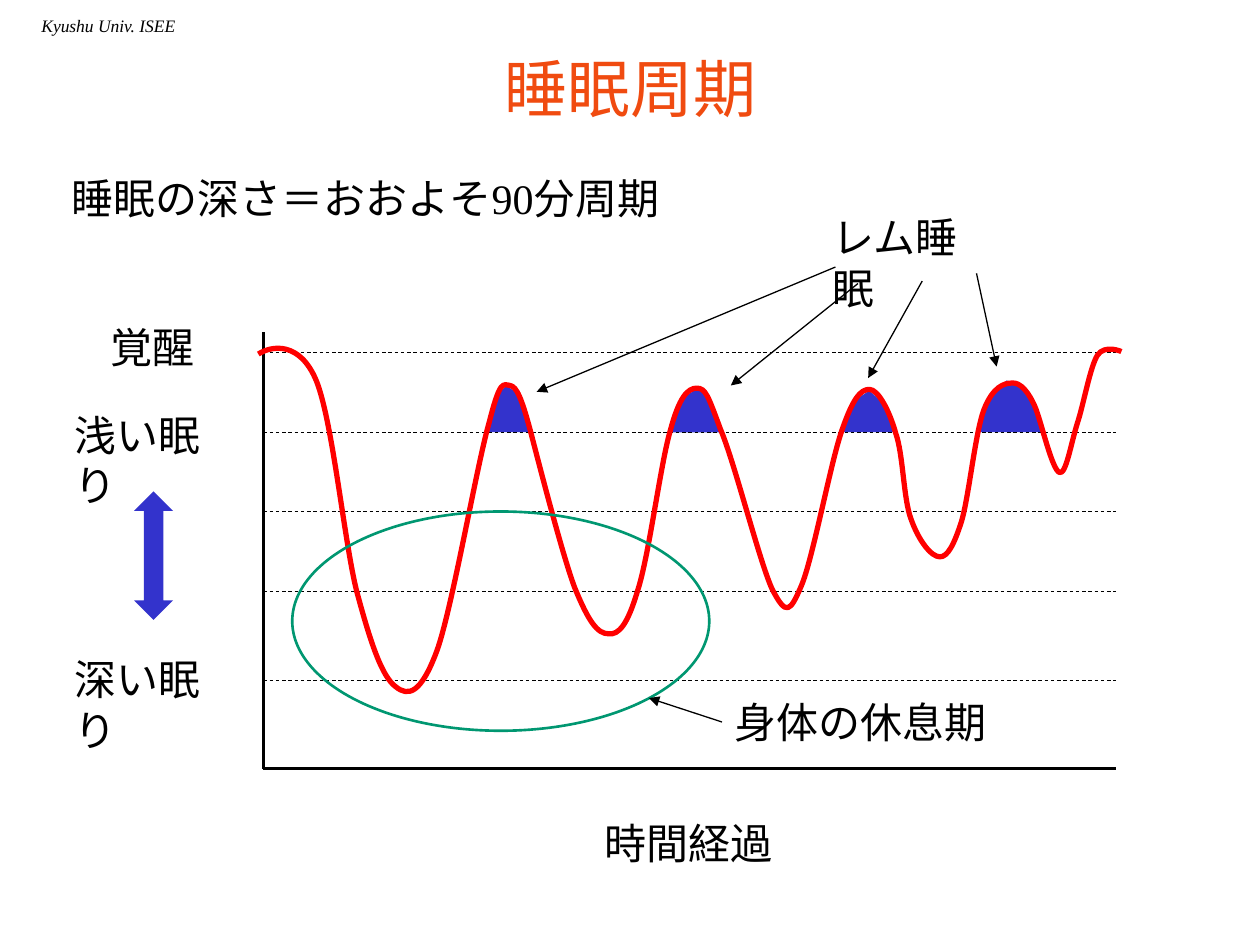
from typing import NamedTuple

from lxml import etree
from pptx import Presentation
from pptx.dml.color import RGBColor
from pptx.enum.dml import MSO_LINE
from pptx.enum.shapes import MSO_CONNECTOR, MSO_SHAPE
from pptx.enum.text import MSO_ANCHOR, MSO_AUTO_SIZE, PP_ALIGN
from pptx.oxml.ns import qn
from pptx.util import Pt

BLACK = RGBColor(0x00, 0x00, 0x00)
ORANGE = RGBColor(0xF0, 0x4B, 0x10)
BLUE = RGBColor(0x33, 0x33, 0xCC)
RED = RGBColor(0xFF, 0x00, 0x00)
GREEN = RGBColor(0x00, 0x97, 0x71)
WHITE = RGBColor(0xFF, 0xFF, 0xFF)
FONT = "Times New Roman"
DASH = MSO_LINE.DASH
STRAIGHT = MSO_CONNECTOR.STRAIGHT
OVAL = MSO_SHAPE.OVAL
UP_DOWN_ARROW = MSO_SHAPE.UP_DOWN_ARROW
CENTER = PP_ALIGN.CENTER
MIDDLE = MSO_ANCHOR.MIDDLE
NO_AUTOFIT = MSO_AUTO_SIZE.NONE

Point = tuple[float, float]


class Label(NamedTuple):
    text: str
    left: float
    top: float
    width: float
    height: float
    size: float = 24
    italic: bool = False


class Line(NamedTuple):
    start: Point
    end: Point
    width: float = 0.75
    dashed: bool = False
    arrow: bool = False


AXIS_LEFT, AXIS_RIGHT, AXIS_TOP, AXIS_BOTTOM = 150.5, 638, 190, 439.2
DEPTH_LEVELS = [388.8, 337.7, 292.3, 247, 201.6]

AXES = [
    Line((AXIS_LEFT, AXIS_TOP), (AXIS_LEFT, AXIS_BOTTOM), 1.5),
    Line((AXIS_LEFT, AXIS_BOTTOM), (AXIS_RIGHT, AXIS_BOTTOM), 1.5),
]
GRID = [Line((AXIS_LEFT, y), (AXIS_RIGHT, y), 0.5, dashed=True) for y in DEPTH_LEVELS]

REM_ARROWS = [
    Line((558, 156.2), (569.5, 209.5), arrow=True),
    Line((527, 160.6), (496.1, 216), arrow=True),
    Line((490.3, 162), (417.6, 220.3), arrow=True),
    Line((477.4, 152.6), (306.7, 223.9), arrow=True),
]
REST_ARROW = Line((412.6, 412.6), (370.8, 398.9), arrow=True)

REM_PEAKS: list[list[Point]] = [
    [(558, 247), (596.2, 247), (586.8, 223.9), (575.3, 217.4), (565.2, 226.8)],
    [(480.2, 247), (511.9, 247), (504.7, 230.4), (496.8, 223.2), (487.4, 229.7)],
    [(383, 247), (412.6, 247), (403.9, 226.1), (398.9, 221.8), (391, 226.8)],
    [(279.4, 247), (302.4, 247), (295.2, 224.6), (289.4, 220.3), (284.4, 225.4)],
]

SLEEP_START: Point = (147.6, 202.3)
SLEEP_CURVES: list[tuple[Point, Point, Point]] = [
    ((155.5, 197.3), (171.4, 195.1), (180.7, 217.4)),
    ((190.1, 240.5), (196.6, 308.9), (203.8, 337.7)),
    ((211.7, 367.2), (218.2, 386.6), (226.1, 392.4)),
    ((233.3, 398.2), (240.5, 396.7), (249.8, 371.5)),
    ((258.5, 347), (272.2, 267.1), (279.4, 241.9)),
    ((285.8, 216.7), (287.3, 219.6), (291.6, 220.3)),
    ((295.2, 221), (298.1, 227.5), (303.1, 246.2)),
    ((308.2, 265.7), (321.1, 316.1), (328.3, 335.5)),
    ((336.2, 355), (341.3, 362.2), (347.8, 362.2)),
    ((353.5, 362.9), (358.6, 357.1), (364.3, 337.7)),
    ((370.8, 318.2), (377.3, 265.7), (383, 246.2)),
    ((388.1, 226.8), (393.1, 221.8), (398.2, 221.8)),
    ((403.2, 221.8), (404.6, 226.1), (411.8, 245.5)),
    ((419.8, 264.2), (434.2, 321.8), (441.4, 337)),
    ((449.3, 352.1), (451.4, 349.9), (457.9, 334.8)),
    ((464.4, 319.7), (474.5, 265), (481, 246.2)),
    ((487.4, 227.5), (491.8, 222.5), (496.8, 222.5)),
    ((501.8, 222.5), (508.3, 234.7), (511.9, 247.7)),
    ((516.2, 259.9), (516.2, 285.1), (520.6, 296.6)),
    ((524.9, 308.9), (532.1, 318.2), (537.1, 318.2)),
    ((541.4, 318.2), (545, 311.8), (549.4, 298.1)),
    ((553.7, 283.7), (557.3, 247), (562.3, 234)),
    ((567.4, 221), (573.8, 218.9), (578.2, 218.9)),
    ((583.2, 218.2), (588.2, 224.6), (591.8, 233.3)),
    ((595.4, 242.6), (601.2, 268.6), (605.5, 270)),
    ((609.1, 271.4), (612, 253.4), (615.6, 241.9)),
    ((619.2, 231.1), (622.8, 210.2), (627.1, 203)),
    ((631.4, 196.6), (640.8, 200.9), (640.8, 200.9)),
]

LABELS = [
    Label("Kyushu Univ. ISEE", 16.6, 5, 95.8, 19.4, 10, True),
    Label("覚醒", 56.2, 180, 63.4, 36),
    Label("浅い眠り", 35.3, 230.4, 103.7, 36.7),
    Label("深い眠り", 35.3, 370.1, 103.7, 36),
    Label("時間経過", 338.4, 463.7, 111.6, 36.7),
    Label("睡眠の深さ＝おおよそ90分周期", 33.8, 95, 394.6, 41),
    Label("レム睡眠", 468.7, 117.4, 107.3, 36.7),
    Label("身体の休息期", 412.6, 394.6, 159.8, 36),
]


def style_shape(shape, fill: RGBColor | None, line: RGBColor | None, width: float = 1) -> None:
    shape.shadow.inherit = False
    if fill is None:
        shape.fill.background()
    else:
        shape.fill.solid()
        shape.fill.fore_color.rgb = fill
    if line is None:
        shape.line.fill.background()
    else:
        shape.line.color.rgb = line
        shape.line.width = Pt(width)


def add_title(slide, text: str) -> None:
    title = slide.shapes.title
    title.left, title.top, title.width, title.height = Pt(54), Pt(5), Pt(612), Pt(90)
    frame = title.text_frame
    frame.text = text
    frame.auto_size = NO_AUTOFIT
    frame.vertical_anchor = MIDDLE
    paragraph = frame.paragraphs[0]
    paragraph.alignment = CENTER
    paragraph.font.name = FONT
    paragraph.font.size = Pt(36)
    paragraph.font.color.rgb = ORANGE


def add_label(slide, label: Label) -> None:
    box = slide.shapes.add_textbox(
        Pt(label.left), Pt(label.top), Pt(label.width), Pt(label.height)
    )
    frame = box.text_frame
    frame.word_wrap = True
    frame.text = label.text
    font = frame.paragraphs[0].font
    font.name = FONT
    font.size = Pt(label.size)
    font.italic = label.italic
    font.color.rgb = BLACK


def add_line(slide, line: Line) -> None:
    connector = slide.shapes.add_connector(
        STRAIGHT, *(Pt(value) for value in line.start + line.end)
    )
    connector.line.color.rgb = BLACK
    connector.line.width = Pt(line.width)
    if line.dashed:
        connector.line.dash_style = DASH
    properties = connector._element.spPr
    if line.arrow:
        etree.SubElement(properties.find(qn("a:ln")), qn("a:tailEnd"), type="triangle")
    etree.SubElement(properties, qn("a:effectLst"))


def add_outline(slide, points: list[Point], close: bool):
    start, *rest = [(Pt(x), Pt(y)) for x, y in points]
    builder = slide.shapes.build_freeform(*start, scale=1.0)
    builder.add_line_segments(rest, close=close)
    return builder.convert_to_shape()


def add_sleep_curve(slide) -> None:
    points = [SLEEP_START] + [point for curve in SLEEP_CURVES for point in curve]
    shape = add_outline(slide, points, close=False)
    outline = next(shape._element.iter(qn("a:path")))
    segments = outline.findall(qn("a:lnTo"))
    for index in range(0, len(segments), 3):
        curve = etree.SubElement(outline, qn("a:cubicBezTo"))
        for segment in segments[index:index + 3]:
            curve.append(segment[0])
            outline.remove(segment)
    style_shape(shape, None, RED, 3)


def add_preset(slide, kind, left: float, top: float, width: float, height: float):
    return slide.shapes.add_shape(kind, Pt(left), Pt(top), Pt(width), Pt(height))


def main() -> None:
    presentation = Presentation()
    presentation.slide_width, presentation.slide_height = Pt(720), Pt(540)
    slide = presentation.slides.add_slide(presentation.slide_layouts[5])
    slide.background.fill.solid()
    slide.background.fill.fore_color.rgb = WHITE
    add_title(slide, "睡眠周期")
    for peak in REM_PEAKS:
        style_shape(add_outline(slide, peak, close=True), BLUE, None)
    for line in AXES + GRID:
        add_line(slide, line)
    add_sleep_curve(slide)
    for label in LABELS:
        add_label(slide, label)
    style_shape(add_preset(slide, UP_DOWN_ARROW, 76.6, 280.8, 22.3, 73.4), BLUE, None)
    style_shape(add_preset(slide, OVAL, 167, 292.3, 238.3, 125.3), None, GREEN, 1.5)
    for line in REM_ARROWS + [REST_ARROW]:
        add_line(slide, line)
    presentation.save("out.pptx")


if __name__ == "__main__":
    main()
